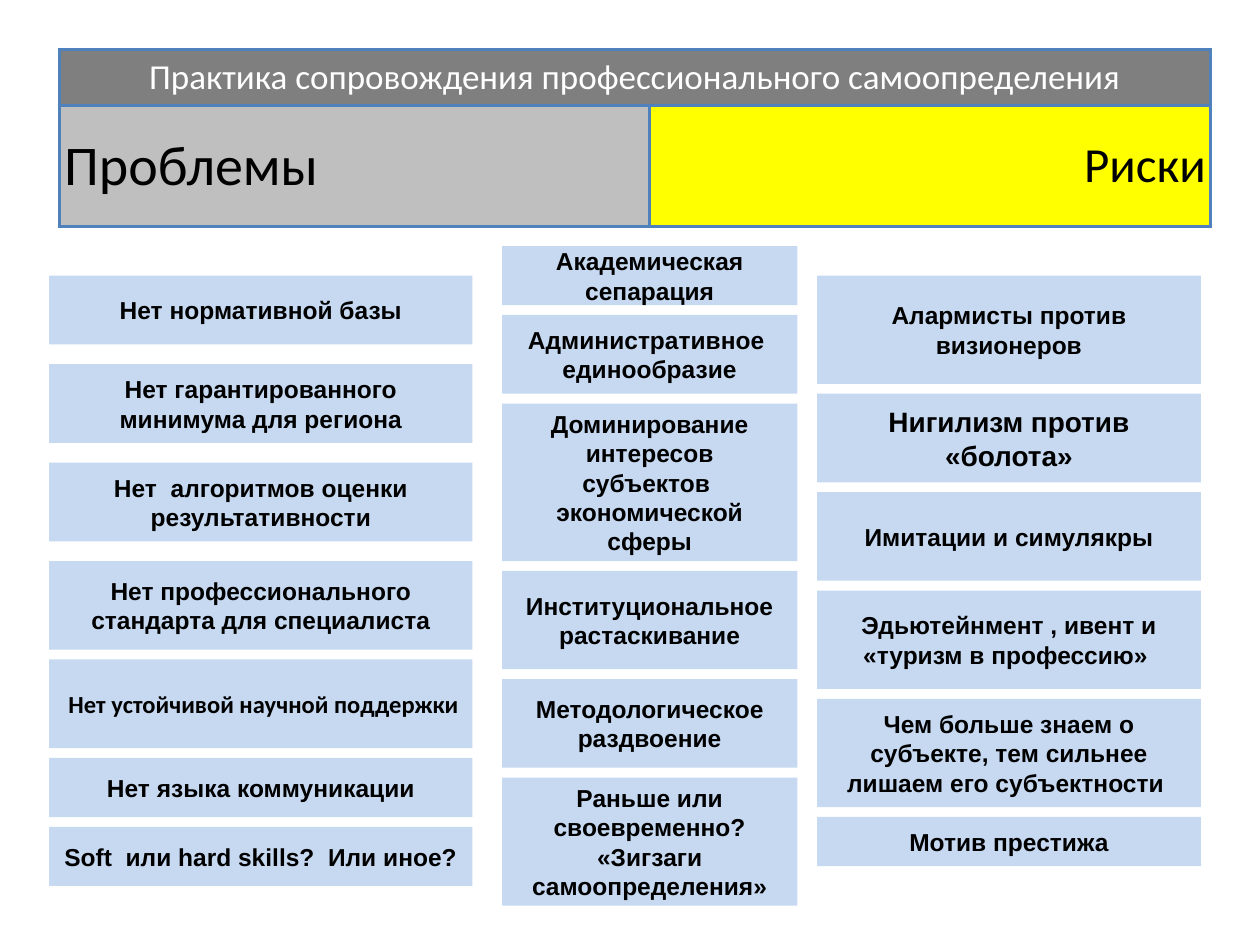
from lxml import etree
from pptx import Presentation
from pptx.dml.color import RGBColor
from pptx.enum.shapes import MSO_SHAPE
from pptx.enum.text import MSO_ANCHOR, PP_ALIGN
from pptx.oxml.ns import qn
from pptx.util import Inches, Pt

RECT = MSO_SHAPE.RECTANGLE
MIDDLE = MSO_ANCHOR.MIDDLE
LEFT, CENTER, RIGHT = PP_ALIGN.LEFT, PP_ALIGN.CENTER, PP_ALIGN.RIGHT

COLORS = {"card": "C6D9F1", "banner": "7F7F7F", "problems": "BFBFBF", "risks": "FFFF00",
          "border": "4F81BD", "dark": "000000", "light": "FFFFFF"}
GRID_COLUMNS = 128  # square cells, so the slide is 96 rows high
CARD_FONT = {"name": "Arial", "size": Pt(14), "bold": True}
TABLE_FONT = {"name": "Calibri", "bold": False}


class Deck:
    def __init__(self, prs):
        self.s = prs.slides.add_slide(prs.slide_layouts[6])
        self.unit = prs.slide_width / GRID_COLUMNS

    def grid(self, *counts):
        return [round(n * self.unit) for n in counts]

    def add_text(self, tf, text, align, color, font):
        """Add one paragraph for each line of text."""
        for i, line in enumerate(text.split("\n")):
            p = tf.add_paragraph() if i else tf.paragraphs[0]
            p.alignment = align
            r = p.add_run()
            r.text = line
            for key, value in font.items():
                setattr(r.font, key, value)
            r.font.color.rgb = RGBColor.from_string(COLORS[color])

    def card(self, x, y, w, h, text, font):
        sp = self.s.shapes.add_shape(RECT, *self.grid(x, y, w, h))
        sp.shadow.inherit = False
        sp.fill.solid()
        sp.fill.fore_color.rgb = RGBColor.from_string(COLORS["card"])
        sp.line.fill.background()
        tf = sp.text_frame
        tf.word_wrap, tf.vertical_anchor = True, MIDDLE
        self.add_text(tf, text, CENTER, "dark", {**CARD_FONT, **font})

    def stack(self, x, y, w, cards):
        """Place cards downwards; each is (gap above, height, text, font changes)."""
        for gap, h, text, font in cards:
            y += gap
            self.card(x, y, w, h, text, font)
            y += h

    def table(self, x, y, widths, heights):
        box = self.grid(x, y, sum(widths), sum(heights))
        table = self.s.shapes.add_table(len(heights), len(widths), *box).table
        for column, width in zip(table.columns, self.grid(*widths)):
            column.width = width
        for row, height in zip(table.rows, self.grid(*heights)):
            row.height = height
        return table

    def cell(self, cell, text, fill, align, color, size):
        cell.fill.solid()
        cell.fill.fore_color.rgb = RGBColor.from_string(COLORS[fill])
        cell.vertical_anchor = MIDDLE
        for side in ("left", "right", "top", "bottom"):
            setattr(cell, f"margin_{side}", Inches(0.04))
        self.borders(cell)
        if text:
            self.add_text(cell.text_frame, text, align, color, {**TABLE_FONT, "size": Pt(size)})

    def borders(self, cell):
        tc_pr = cell._tc.get_or_add_tcPr()
        for i, side in enumerate(("lnL", "lnR", "lnT", "lnB")):
            ln = etree.Element(qn(f"a:{side}"), w=str(Pt(2)))
            fill = etree.SubElement(ln, qn("a:solidFill"))
            etree.SubElement(fill, qn("a:srgbClr"), val=COLORS["border"])
            tc_pr.insert(i, ln)


PROBLEMS = [
    (0, 7, "Нет нормативной базы", {}),
    (2, 8, "Нет гарантированного минимума для региона", {}),
    (2, 8, "Нет  алгоритмов оценки результативности", {}),
    (2, 9, "Нет профессионального стандарта для специалиста", {}),
    (1, 9, " Нет устойчивой научной поддержки", {"name": "Calibri"}),
    (1, 6, "Нет языка коммуникации", {}),
    (1, 6, "Soft  или hard skills?  Или иное?", {}),
]
SHARED = [
    (0, 6, "Академическая сепарация", {}),
    (1, 8, "Административное \nединообразие", {}),
    (1, 16, "Доминирование интересов\nсубъектов  экономической сферы", {}),
    (1, 10, "Институциональное\nрастаскивание", {}),
    (1, 9, "Методологическое раздвоение", {}),
    (1, 13, "Раньше или своевременно?\n«Зигзаги самоопределения»", {}),
]
RISKS = [
    (0, 11, "Алармисты против визионеров", {}),
    (1, 9, "Нигилизм против «болота»", {"size": Pt(16)}),
    (1, 9, "Имитации и симулякры", {}),
    (1, 10, "Эдьютейнмент , ивент и «туризм в профессию» ", {}),
    (1, 11, "Чем больше знаем о субъекте, тем сильнее лишаем его субъектности ", {}),
    (1, 5, "Мотив престижа", {}),
]


def main():
    prs = Presentation()
    prs.slide_width, prs.slide_height = Inches(10), Inches(7.5)
    deck = Deck(prs)

    table = deck.table(6, 5, widths=(60, 57), heights=(5.75, 12.25))
    table.cell(0, 0).merge(table.cell(0, 1))
    banner = "Практика сопровождения профессионального самоопределения"
    deck.cell(table.cell(0, 0), banner, "banner", CENTER, "light", 20)
    deck.cell(table.cell(0, 1), "", "banner", CENTER, "light", 20)
    deck.cell(table.cell(1, 0), "Проблемы", "problems", LEFT, "dark", 32)
    deck.cell(table.cell(1, 1), "Риски", "risks", RIGHT, "dark", 28)

    deck.stack(5, 28, 43, PROBLEMS)
    deck.stack(51, 25, 30, SHARED)
    deck.stack(83, 28, 39, RISKS)
    prs.save("out.pptx")


if __name__ == "__main__":
    main()
